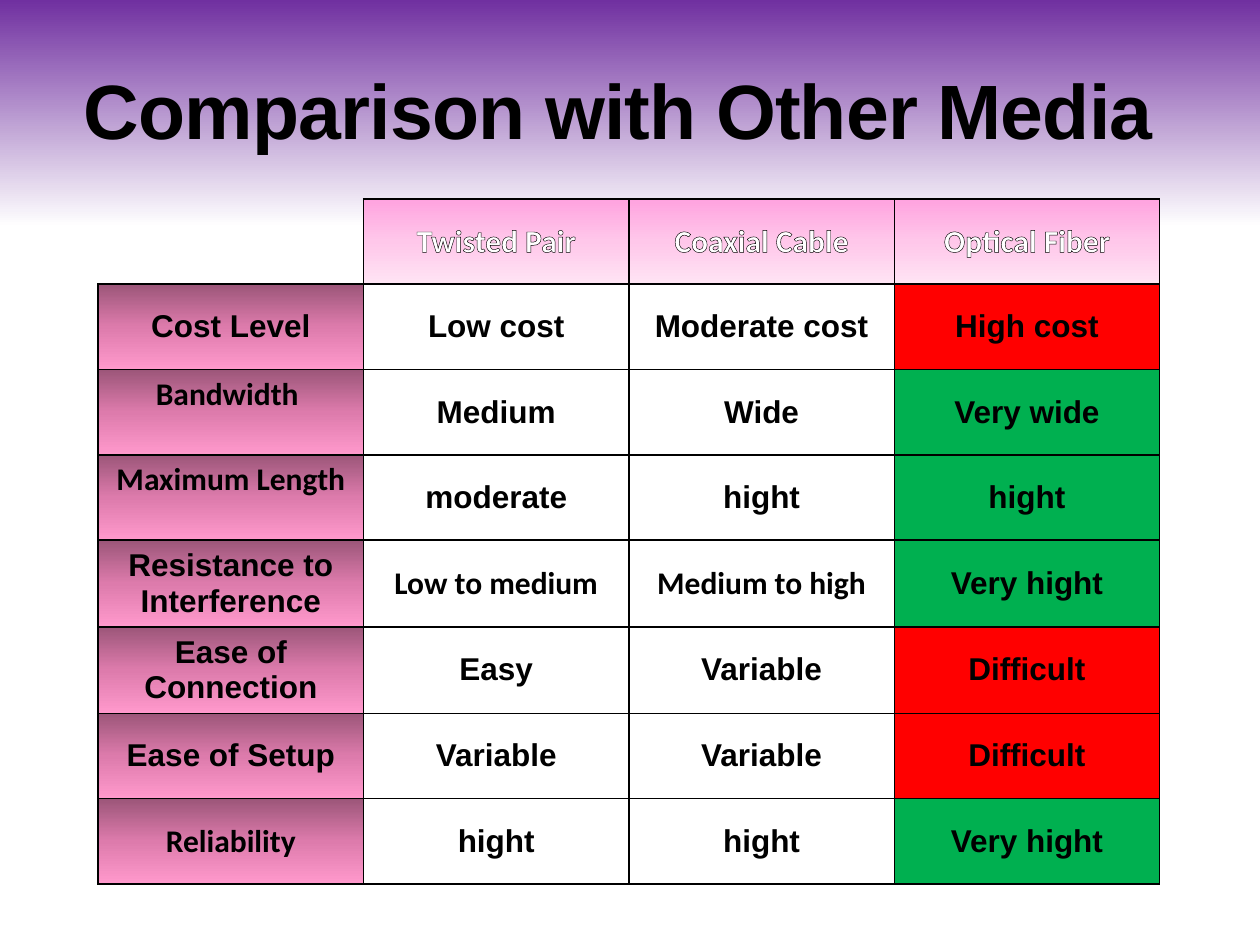
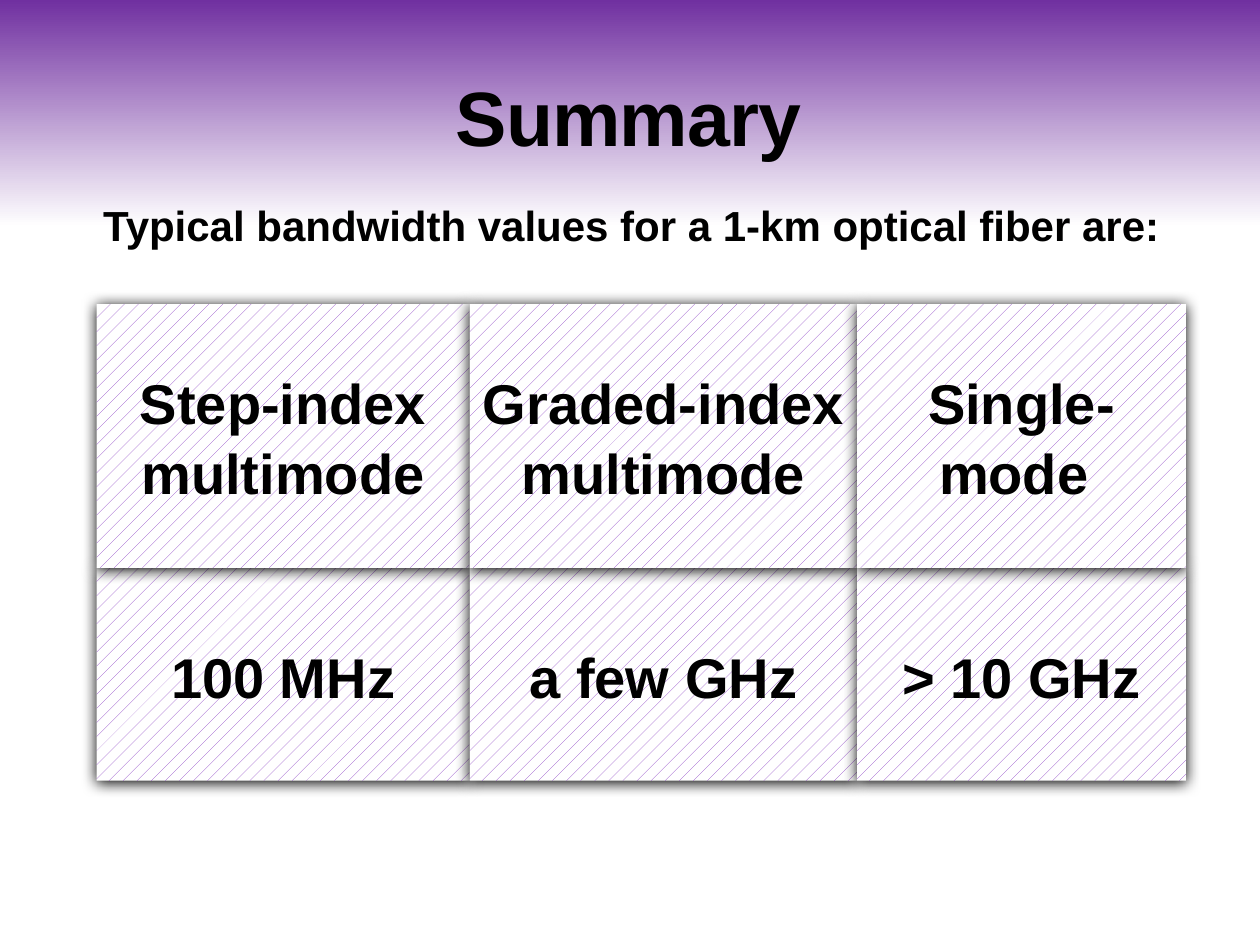
from copy import deepcopy

from lxml import etree
from pptx import Presentation
from pptx.dml.color import RGBColor
from pptx.enum.dml import MSO_PATTERN
from pptx.enum.shapes import MSO_SHAPE
from pptx.enum.text import MSO_ANCHOR, PP_ALIGN
from pptx.oxml.ns import qn
from pptx.util import Cm, Pt

RECTANGLE = MSO_SHAPE.RECTANGLE
DOTS = MSO_PATTERN.PERCENT_10
CENTER = PP_ALIGN.CENTER
TOP, MIDDLE, BOTTOM = MSO_ANCHOR.TOP, MSO_ANCHOR.MIDDLE, MSO_ANCHOR.BOTTOM

BLACK = RGBColor(0x00, 0x00, 0x00)
WHITE = RGBColor(0xFF, 0xFF, 0xFF)
PURPLE = RGBColor(0x70, 0x30, 0xA0)
VIOLET = RGBColor(0x8D, 0x42, 0xC6)
RED = RGBColor(0xFF, 0x00, 0x00)
GREEN = RGBColor(0x00, 0xB0, 0x50)
PAGE_STOPS = [(0, PURPLE), (0.24, WHITE), (1, WHITE)]
HEADER_STOPS = [(0, RGBColor(0xFF, 0xA3, 0xDF)),
                (0.5, RGBColor(0xFF, 0xC7, 0xEA)),
                (1, RGBColor(0xFF, 0xE4, 0xF4))]
LABEL_STOPS = [(0, RGBColor(0x9C, 0x56, 0x79)),
               (0.5, RGBColor(0xDD, 0x7B, 0xAC)),
               (1, RGBColor(0xFF, 0x99, 0xCC))]

MEDIA_ROWS = [
    ["", "Twisted Pair", "Coaxial Cable", "Optical Fiber"],
    ["Cost Level", "Low cost", "Moderate cost", "High cost"],
    ["Bandwidth ", "Medium", "Wide", "Very wide"],
    ["Maximum Length", "moderate", "hight", "hight"],
    ["Resistance to Interference", "Low to medium", "Medium to high",
     "Very hight"],
    ["Ease of Connection", "Easy", "Variable", "Difficult"],
    ["Ease of Setup", "Variable", "Variable", "Difficult"],
    ["Reliability", "hight", "hight", "Very hight"],
]
DRAWBACKS = {"High cost", "Difficult"}
TOP_LABELS = {"Bandwidth ", "Maximum Length"}
CALIBRI_TEXTS = {*MEDIA_ROWS[0], *TOP_LABELS, "Low to medium",
                 "Medium to high", "Reliability"}

FIBERS = [
    ("Step-index multimode", "100 MHz", 7.52),
    ("Graded-index multimode", "a few GHz", 7.81),
    ("Single-mode ", "> 10 GHz", 6.63),
]


def set_gradient(fill, owner, stops):
    """Fill downwards; owner is the XML element that holds the fill."""
    fill.gradient()
    fill.gradient_angle = 270
    stop_list = next(owner.iter(qn("a:gsLst")))
    stop_list.append(deepcopy(stop_list[-1]))
    for stop, (position, color) in zip(fill.gradient_stops, stops):
        stop.position = position
        stop.color.rgb = color


def add_color(parent, color):
    solid = etree.SubElement(parent, qn("a:solidFill"))
    etree.SubElement(solid, qn("a:srgbClr"), val=str(color))


def set_text(tf, text, size, font="Arial", color=BLACK, line_spacing=None):
    """Write one bold, centred paragraph and return its run."""
    tf.text = text
    p = tf.paragraphs[0]
    p.alignment = CENTER
    p.line_spacing = line_spacing
    r = p.runs[0]
    r.font.name = font
    r.font.size = Pt(size)
    r.font.bold = True
    r.font.color.rgb = color
    return r


def add_label(slide, text, left, top, width, height, size, anchor,
              wrap=True, line_spacing=None):
    box = slide.shapes.add_textbox(Cm(left), Cm(top), Cm(width), Cm(height))
    tf = box.text_frame
    tf.word_wrap = wrap
    tf.vertical_anchor = anchor
    return set_text(tf, text, size, line_spacing=line_spacing)


def add_title(slide, text, top):
    r = add_label(slide, text, 1.17, top, 23, 2.2, 44, BOTTOM,
                  line_spacing=0.85)
    r._r.get_or_add_rPr().set("spc", "-50")


def outline_text(r):
    ln = etree.Element(qn("a:ln"), w=str(Pt(0.75)))
    add_color(ln, BLACK)
    r._r.get_or_add_rPr().insert(0, ln)


def set_borders(cell, visible):
    """Draw the sides named in visible and clear the others."""
    tc_pr = cell._tc.get_or_add_tcPr()
    for side in "LRTB":
        ln = etree.SubElement(tc_pr, qn("a:ln" + side), w=str(Pt(1)))
        if side in visible:
            add_color(ln, BLACK)
        else:
            etree.SubElement(ln, qn("a:noFill"))


def fill_cell(cell, row, col):
    if row == 0:
        set_gradient(cell.fill, cell._tc, HEADER_STOPS)
    elif col == 0:
        set_gradient(cell.fill, cell._tc, LABEL_STOPS)
    elif col == 3:
        cell.fill.solid()
        cell.fill.fore_color.rgb = RED if cell.text in DRAWBACKS else GREEN
    else:
        cell.fill.background()


def add_media_table(slide):
    frame = slide.shapes.add_table(len(MEDIA_ROWS), 4, Cm(1.98), Cm(4.01),
                                   Cm(21.4), Cm(13.71))
    table = frame.table
    table.first_row = table.horz_banding = False
    for column in table.columns:
        column.width = Cm(5.35)
    for row, texts in enumerate(MEDIA_ROWS):
        table.rows[row].height = Cm(1.67 if row == 4 else 1.72)
        for col, text in enumerate(texts):
            cell = table.cell(row, col)
            cell.margin_top = cell.margin_bottom = Cm(0.11)
            set_borders(cell, "LRTB" if text else "RB")
            if not text:
                cell.fill.background()
                continue
            cell.vertical_anchor = TOP if text in TOP_LABELS else MIDDLE
            r = set_text(cell.text_frame, text, 18,
                         "Calibri" if text in CALIBRI_TEXTS else "Arial",
                         BLACK if row else WHITE)
            if row == 0:
                outline_text(r)
            fill_cell(cell, row, col)


def add_shadow(sp):
    sp.shadow.inherit = False
    effects = sp._element.spPr.find(qn("a:effectLst"))
    shadow = etree.SubElement(effects, qn("a:outerShdw"),
                              blurRad=str(Pt(8.5)), dist=str(Pt(1)),
                              dir="5400000", rotWithShape="0")
    etree.SubElement(shadow, qn("a:srgbClr"), val=str(BLACK))


def add_panel(slide, text, left, top, width, height):
    sp = slide.shapes.add_shape(RECTANGLE, Cm(left), Cm(top), Cm(width),
                                Cm(height))
    sp.fill.patterned()
    sp.fill.pattern = DOTS
    sp.fill.fore_color.rgb = VIOLET
    sp.fill.back_color.rgb = WHITE
    sp.line.fill.background()
    add_shadow(sp)
    tf = sp.text_frame
    tf.word_wrap = True
    tf.vertical_anchor = MIDDLE
    set_text(tf, text, 32, line_spacing=1.04)


def add_fiber_panels(slide):
    left, top, name_height, value_height = 1.95, 6.13, 5.32, 4.29
    for name, bandwidth, width in FIBERS:
        add_panel(slide, bandwidth, left, top + name_height, width,
                  value_height)
        add_panel(slide, name, left, top, width, name_height)
        left += width


def main():
    prs = Presentation()
    prs.slide_width, prs.slide_height = Cm(25.4), Cm(19.05)
    blank = prs.slide_layouts[6]
    master = prs.slide_master
    set_gradient(master.background.fill, master._element, PAGE_STOPS)

    comparison = prs.slides.add_slide(blank)
    add_title(comparison, "Comparison with Other Media ", 1.06)
    add_media_table(comparison)

    summary = prs.slides.add_slide(blank)
    add_title(summary, "Summary", 1.19)
    add_label(summary, "Typical bandwidth values for a 1-km optical fiber are:",
              1.73, 3.9, 22, 1.28, 24, MIDDLE, wrap=False)
    add_fiber_panels(summary)

    prs.save("out.pptx")


if __name__ == "__main__":
    main()
